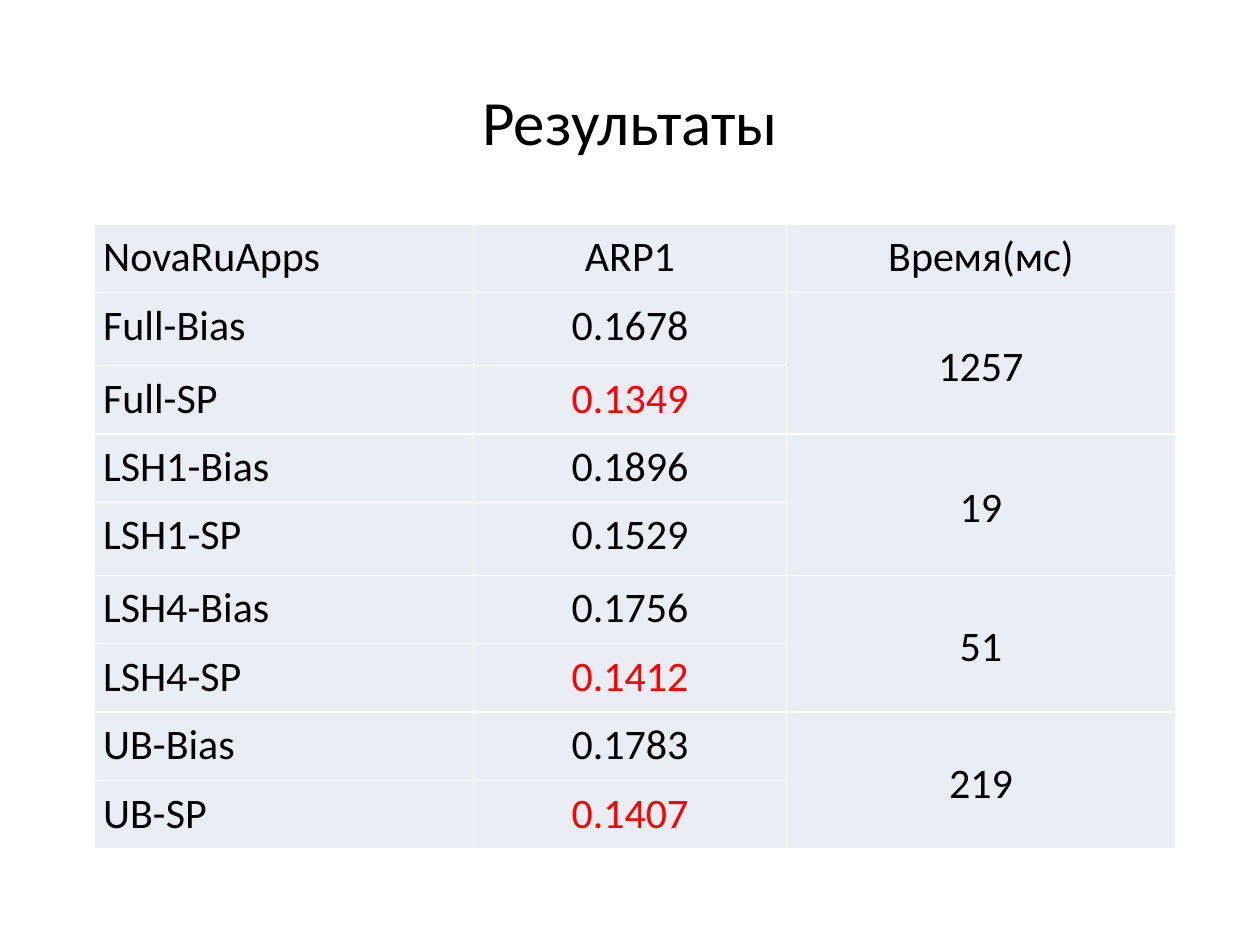
import lxml.etree
import pptx
import pptx.dml.color
import pptx.enum.text
import pptx.oxml.ns
import pptx.util

Cm, Pt = pptx.util.Cm, pptx.util.Pt
ALIGN = pptx.enum.text.PP_ALIGN
MIDDLE = pptx.enum.text.MSO_ANCHOR.MIDDLE
TOP = pptx.enum.text.MSO_ANCHOR.TOP

COLORS = {"text": "000000", "best": "FF0000", "cell": "E9EDF4", "border": "FFFFFF"}

HEADINGS = ("NovaRuApps", "ARP1", "Время(мс)")
# Method, ARP1 with bias, ARP1 with SP, time in ms
METHODS = [
    ("Full", "0.1678", "0.1349", "1257"),
    ("LSH1", "0.1896", "0.1529", "19"),
    ("LSH4", "0.1756", "0.1412", "51"),
    ("UB", "0.1783", "0.1407", "219"),
]
BEST_SCORES = {"0.1349", "0.1412", "0.1407"}
COLUMN_WIDTHS = (7.65, 6.3, 7.85)
ROW_HEIGHT, TALL_ROW_HEIGHT = 1.38, 1.47
TALL_ROWS = {1, 4}


def rgb(name):
    return pptx.dml.color.RGBColor.from_string(COLORS[name])


def apply_format(target, values):
    for name, value in values.items():
        setattr(target, name, value)


class SlideBuilder:
    font = "Calibri"
    cell_format = {"margin_left": Cm(0.18), "margin_right": Cm(0.18),
                   "margin_top": 0, "margin_bottom": 0}

    def __init__(self, slide):
        self.slide = slide

    def add_text(self, frame, text, size, align, color="text", spacing=1.0):
        paragraph = frame.paragraphs[0]
        apply_format(paragraph, {"alignment": align, "line_spacing": spacing})
        run = paragraph.add_run()
        run.text = text
        apply_format(run.font, {"name": self.font, "size": Pt(size)})
        run.font.color.rgb = rgb(color)

    def title(self, text, left, top, width, height):
        heading = self.slide.shapes.add_textbox(Cm(left), Cm(top), Cm(width), Cm(height))
        apply_format(heading.text_frame, {"word_wrap": True, "vertical_anchor": MIDDLE})
        self.add_text(heading.text_frame, text, 36, ALIGN.CENTER)

    def borders(self, cell):
        properties = cell._tc.get_or_add_tcPr()
        qn = pptx.oxml.ns.qn
        for side in ("lnL", "lnR", "lnT", "lnB"):
            line = lxml.etree.SubElement(properties, qn(f"a:{side}"), w=str(Pt(1)))
            fill = lxml.etree.SubElement(line, qn("a:solidFill"))
            lxml.etree.SubElement(fill, qn("a:srgbClr"), val=COLORS["border"])

    def cell(self, cell, text, align, anchor):
        apply_format(cell, {**self.cell_format, "vertical_anchor": anchor})
        self.borders(cell)
        cell.fill.solid()
        cell.fill.fore_color.rgb = rgb("cell")
        if text:
            color = "best" if text in BEST_SCORES else "text"
            self.add_text(cell.text_frame, text, 24, align, color, 1.15)

    def table(self, rows, left, top, widths, heights):
        results = self.slide.shapes.add_table(
            len(rows), len(widths), Cm(left), Cm(top),
            Cm(sum(widths)), Cm(sum(heights))).table
        for column, width in zip(results.columns, widths):
            column.width = Cm(width)
        for row, height in zip(results.rows, heights):
            row.height = Cm(height)
        for r, texts in enumerate(rows):
            for c, text in enumerate(texts):
                align = ALIGN.CENTER if c else ALIGN.JUSTIFY
                anchor = MIDDLE if r and c == 2 else TOP
                self.cell(results.cell(r, c), text, align, anchor)
        return results


def main():
    deck = pptx.Presentation()
    apply_format(deck, {"slide_width": Cm(25.4), "slide_height": Cm(19.05)})
    builder = SlideBuilder(deck.slides.add_slide(deck.slide_layouts[6]))

    # Heading
    builder.title("Результаты", 1.1, 1.12, 23.2, 2.6)

    # Results: two rows per method
    rows = [HEADINGS]
    for method, bias, sp, time in METHODS:
        rows += [(f"{method}-Bias", bias, time), (f"{method}-SP", sp, "")]
    heights = [TALL_ROW_HEIGHT if r in TALL_ROWS else ROW_HEIGHT
               for r in range(len(rows))]
    results = builder.table(rows, 1.9, 4.52, COLUMN_WIDTHS, heights)

    # One shared time per method
    for r in range(1, len(rows), 2):
        results.cell(r, 2).merge(results.cell(r + 1, 2))

    deck.save("out.pptx")


if __name__ == "__main__":
    main()
